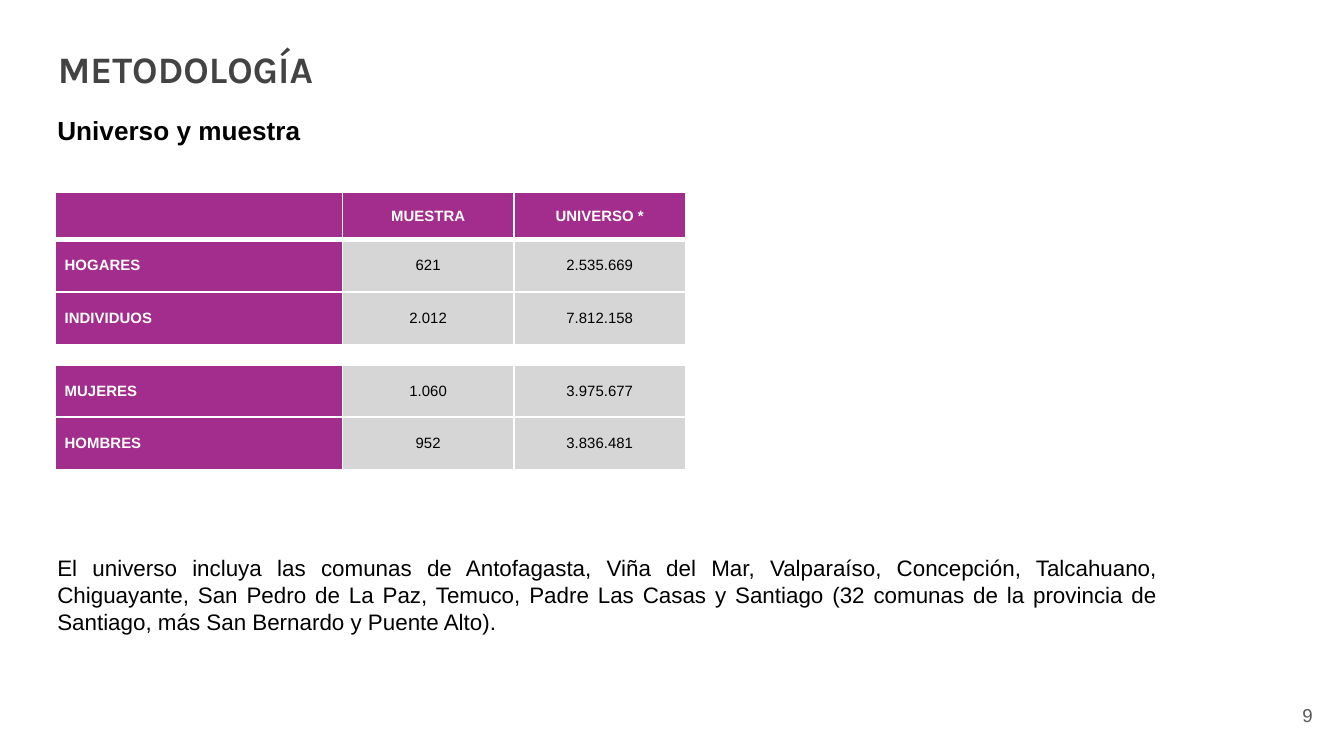
from typing import NamedTuple

from lxml import etree
from pptx import Presentation
from pptx.dml.color import RGBColor
from pptx.enum.text import MSO_ANCHOR, MSO_AUTO_SIZE, PP_ALIGN
from pptx.oxml.ns import qn
from pptx.util import Inches, Pt

LEFT, MID, RIGHT, JUST = PP_ALIGN.LEFT, PP_ALIGN.CENTER, PP_ALIGN.RIGHT, PP_ALIGN.JUSTIFY
TOP, CENTER = MSO_ANCHOR.TOP, MSO_ANCHOR.MIDDLE
WIDE = Inches(10)
HIGH = WIDE * 9 // 16
COLORS = {"plum": "A32D8D", "gray": "D6D6D6", "white": "FFFFFF",
          "black": "000000", "title": "434343", "page": "595959"}


class Box(NamedTuple):
    """Place and size in percent of the slide."""
    x: float
    y: float
    w: float
    h: float


class Row(NamedTuple):
    h: float
    cells: tuple[str, str, str] = ("", "", "")


HEAD, DATA, GAP = 6.2, 6.95, 2.7
COLS = (21.36, 12.77, 12.77)
ROWS = (
    Row(HEAD, ("", "MUESTRA", "UNIVERSO *")),
    Row(DATA, ("HOGARES", "621", "2.535.669")),
    Row(DATA, ("INDIVIDUOS", "2.012", "7.812.158")),
    Row(GAP),
    Row(DATA, ("MUJERES", "1.060", "3.975.677")),
    Row(DATA, ("HOMBRES", "952", "3.836.481")),
    Row(GAP),
)
NOTE = ("El universo incluya las comunas de Antofagasta, Viña del Mar, Valparaíso, "
        "Concepción, Talcahuano, Chiguayante, San Pedro de La Paz, Temuco, Padre Las "
        "Casas y Santiago (32 comunas de la provincia de Santiago, más San Bernardo "
        "y Puente Alto).")


def color(name: str) -> RGBColor:
    return RGBColor.from_string(COLORS[name])


def across(share: float) -> int:
    return round(WIDE * share / 100)


def down(share: float) -> int:
    return round(HIGH * share / 100)


def frame(box: Box) -> tuple[int, int, int, int]:
    return across(box.x), down(box.y), across(box.w), down(box.h)


def write(para, text: str, *, size: float, ink: str = "black", font: str = "Arial",
          bold: bool = False, align=LEFT) -> None:
    para.alignment = align
    run = para.add_run()
    run.text = text
    run.font.size, run.font.name, run.font.bold = Pt(size), font, bold
    run.font.color.rgb = color(ink)


def pad(body, side: float, edge: float) -> None:
    body.margin_left = body.margin_right = Inches(side)
    body.margin_top = body.margin_bottom = Inches(edge)


def add_text(slide, box: Box, text: str, *, wrap: bool = True, anchor=TOP,
             edge: float = 0.05, grow: bool = False, **style) -> None:
    body = slide.shapes.add_textbox(*frame(box)).text_frame
    body.word_wrap, body.vertical_anchor = wrap, anchor
    body.auto_size = MSO_AUTO_SIZE.SHAPE_TO_FIT_TEXT if grow else MSO_AUTO_SIZE.NONE
    pad(body, 0.1, edge)
    write(body.paragraphs[0], text, **style)


def add_title(slide, box: Box, text: str, **style) -> None:
    title = slide.shapes.title
    title.left, title.top, title.width, title.height = frame(box)
    body = title.text_frame
    body.word_wrap, body.vertical_anchor = True, TOP
    body.auto_size = MSO_AUTO_SIZE.NONE
    pad(body, 0.1, 0.1)
    write(body.paragraphs[0], text, **style)


def rule_cell(cell, top: float, base: float) -> None:
    """Draw the white borders; they must come before the fill."""
    widths = {"lnL": 1, "lnR": 1, "lnT": top, "lnB": base}
    props = cell._tc.get_or_add_tcPr()
    for spot, (side, width) in enumerate(widths.items()):
        line = etree.Element(qn(f"a:{side}"), w=str(Pt(width)))
        fill = etree.SubElement(line, qn("a:solidFill"))
        etree.SubElement(fill, qn("a:srgbClr"), val=COLORS["white"])
        props.insert(spot, line)


def fill_cell(cell, text: str, row: int, col: int) -> None:
    pad(cell, 0.07, 0)
    cell.vertical_anchor = CENTER
    label = row == 0 or col == 0
    if any(ROWS[row].cells):
        cell.fill.solid()
        cell.fill.fore_color.rgb = color("plum" if label else "gray")
    else:
        cell.fill.background()
    para = cell.text_frame.paragraphs[0]
    if text:
        write(para, text, size=8, bold=label, ink="white" if label else "black",
              align=MID if col else LEFT)
    else:
        etree.SubElement(para._p, qn("a:endParaRPr"), sz="800")
    rule_cell(cell, 3 if row == 1 else 1, 3 if row == 0 else 1)


def add_grid(slide, x: float, y: float) -> None:
    box = Box(x, y, sum(COLS), sum(row.h for row in ROWS))
    table = slide.shapes.add_table(len(ROWS), len(COLS), *frame(box)).table
    table.first_row = table.horz_banding = False
    for col, width in enumerate(COLS):
        table.columns[col].width = across(width)
    for r, row in enumerate(ROWS):
        table.rows[r].height = down(row.h)
        for c, text in enumerate(row.cells):
            fill_cell(table.cell(r, c), text, r, c)


def main() -> None:
    deck = Presentation()
    deck.slide_width, deck.slide_height = WIDE, HIGH
    slide = deck.slides.add_slide(deck.slide_layouts[5])
    add_title(slide, Box(3.3, 4.27, 88.1, 11.2), "METODOLOGÍA",
              size=20, font="Karla", ink="title", bold=True)
    add_text(slide, Box(3.28, 14.23, 20.2, 6.05), "Universo y muestra",
             size=14, bold=True, wrap=False, grow=True)
    add_grid(slide, 4.12, 25.48)
    add_text(slide, Box(3.28, 72.42, 83.9, 12.63), NOTE, size=12, align=JUST, grow=True)
    add_text(slide, Box(92.65, 90.7, 6, 7.65), "9", size=10, ink="page",
             align=RIGHT, anchor=CENTER, edge=0.1)
    deck.save("out.pptx")


if __name__ == "__main__":
    main()
